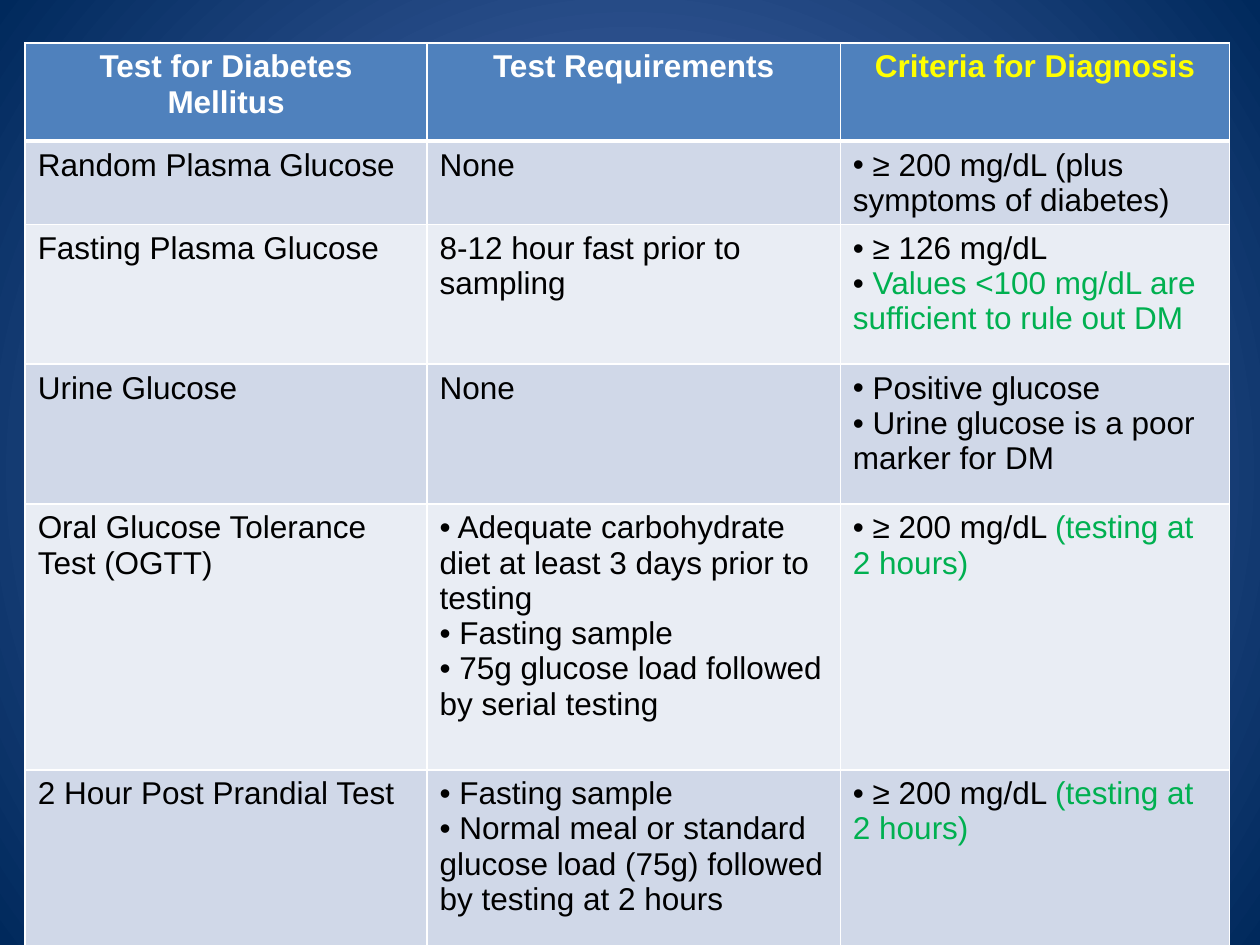
from lxml.etree import SubElement as Sub
from pptx import Presentation
from pptx.dml.color import RGBColor as RGB
from pptx.enum.text import PP_ALIGN as AL
from pptx.oxml import parse_xml
from pptx.oxml.ns import nsdecls, qn
from pptx.util import Inches, Pt

C = {"head": "4F81BD", "odd": "D0D8E8", "even": "E9EDF4", "white": "FFFFFF",
     "black": "000000", "yellow": "FFFF00", "green": "00B050",
     "glow": "5E7CC5", "edge": "00295C"}
COLS = [3.19, 3.28, 3.09]
HEIGHTS = [0.78, 0.45, 1.11, 1.11, 2.11, 1.45]
BULLET, GREEN = "•", "|"
TWO_HOURS = ["• ≥ 200 mg/dL |(testing at 2 hours)"]
ROWS = [
    [["Test for Diabetes Mellitus"], ["Test Requirements"], ["Criteria for Diagnosis"]],
    [["Random Plasma Glucose"], ["None"],
     ["• ≥ 200 mg/dL (plus symptoms of diabetes)"]],
    [["Fasting Plasma Glucose"], ["8-12 hour fast prior to sampling"],
     ["• ≥ 126 mg/dL", "• |Values <100 mg/dL are sufficient to rule out DM"]],
    [["Urine Glucose"], ["None"],
     ["• Positive glucose", "• Urine glucose is a poor marker for DM"]],
    [["Oral Glucose Tolerance Test (OGTT)"],
     ["• Adequate carbohydrate diet at least 3 days prior to testing",
      "• Fasting sample", "• 75g glucose load followed by serial testing"],
     TWO_HOURS],
    [["2 Hour Post Prandial Test"],
     ["• Fasting sample",
      "• Normal meal or standard glucose load (75g) followed by testing at 2 hours"],
     TWO_HOURS],
]


def add_borders(cell, bottom, top):
    tcPr = cell._tc.get_or_add_tcPr()
    for i, (side, width) in enumerate([("L", 1), ("R", 1), ("T", top), ("B", bottom)]):
        tcPr.insert(i, parse_xml(
            f'<a:ln{side} {nsdecls("a")} w="{Pt(width)}"><a:solidFill>'
            f'<a:srgbClr val="{C["white"]}"/></a:solidFill></a:ln{side}>'))


def write_paragraph(p, text, color, bold):
    if text.startswith(BULLET):
        text = text[len(BULLET):]
        pPr = p._p.get_or_add_pPr()
        pPr.set("marL", "0")
        pPr.set("indent", "0")
        Sub(pPr, qn("a:buFont"), typeface="Arial")
        Sub(pPr, qn("a:buChar"), char=BULLET)
    for part, ink in zip(text.split(GREEN), [color, "green"]):
        r = p.add_run()
        r.text = part
        for name, value in {"name": "Arial", "size": Pt(18), "bold": bold}.items():
            setattr(r.font, name, value)
        r.font.color.rgb = RGB.from_string(C[ink])


prs = Presentation()
prs.slide_width, prs.slide_height = Inches(10), Inches(7.5)
s = prs.slides.add_slide(prs.slide_layouts[6])

fill = s.background.fill
fill.gradient()
for stop, color, position in zip(fill.gradient_stops, ["glow", "edge"], [0, 1]):
    stop.color.rgb = RGB.from_string(C[color])
    stop.position = position
lin = next(s.background._cSld.iter(qn("a:lin")))
lin.getparent().replace(lin, parse_xml(
    f'<a:path {nsdecls("a")} path="circle">'
    '<a:fillToRect l="50000" t="50000" r="50000" b="50000"/></a:path>'))

table = s.shapes.add_table(len(ROWS), len(COLS), Inches(0.2), Inches(0.34),
                           Inches(sum(COLS)), Inches(sum(HEIGHTS))).table
for col, width in zip(table.columns, COLS):
    col.width = Inches(width)

for i, (row, height) in enumerate(zip(ROWS, HEIGHTS)):
    table.rows[i].height = Inches(height)
    header = i == 0
    band = "head" if header else "odd" if i % 2 else "even"
    for j, paragraphs in enumerate(row):
        cell = table.cell(i, j)
        cell.fill.solid()
        cell.fill.fore_color.rgb = RGB.from_string(C[band])
        add_borders(cell, bottom=3 if header else 1, top=3 if i == 1 else 1)
        color = "black" if not header else "yellow" if j == 2 else "white"
        tf = cell.text_frame
        for k, text in enumerate(paragraphs):
            p = tf.add_paragraph() if k else tf.paragraphs[0]
            p.alignment = AL.CENTER if header else AL.LEFT
            write_paragraph(p, text, color, header)

prs.save("out.pptx")
